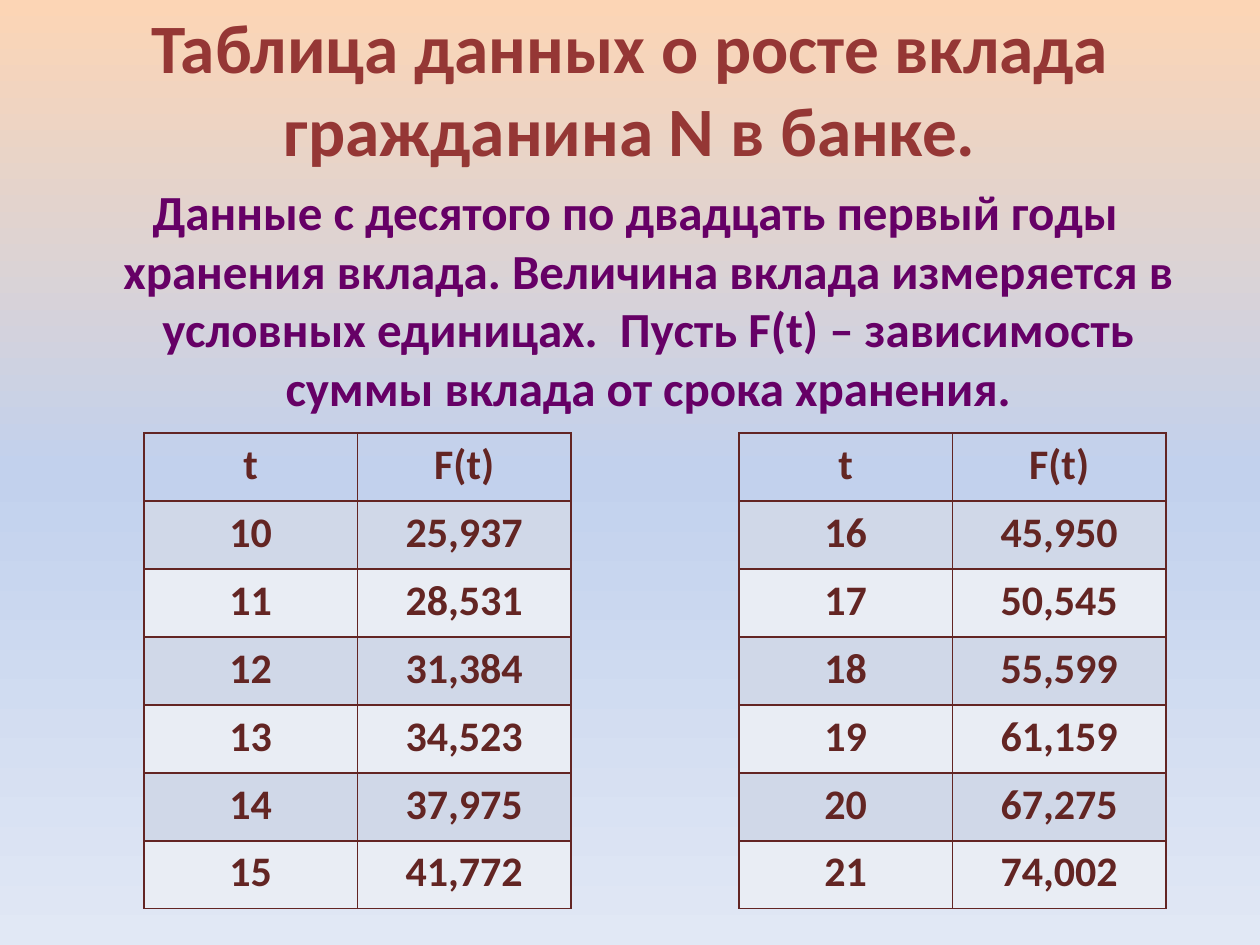
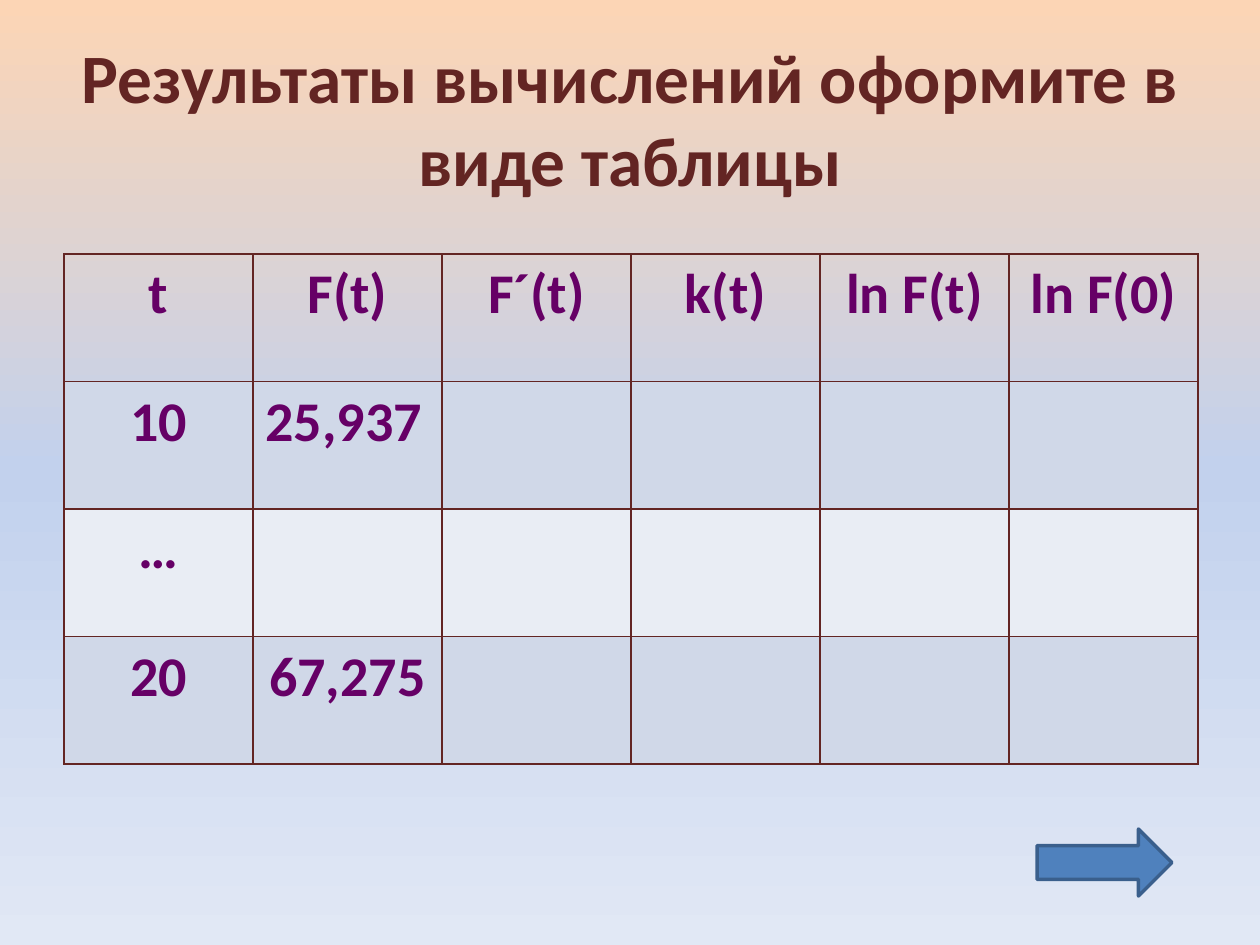
from pptx import Presentation
from pptx.dml.color import RGBColor
from pptx.enum.shapes import MSO_SHAPE as Shape
from pptx.enum.text import MSO_ANCHOR as Anchor, MSO_AUTO_SIZE as AutoSize, PP_ALIGN as Align
from pptx.oxml import parse_xml
from pptx.oxml.ns import nsdecls, qn
from pptx.util import Emu, Pt

PX = 914400 / 126
BROWN, RED, PURPLE = "632523", "953735", "660066"
BANDS = ["D0D8E8", "E9EDF4"]
BACKDROP = {0: "FCD5B5", 50: "C2D1ED", 100: "E1E8F5"}


def px(length):
    return Emu(round(length * PX))


def rgb(code):
    return RGBColor.from_string(code)


def apply(target, formats):
    for name, value in formats.items():
        setattr(target, name, value)


class Deck:
    font = {"name": "Calibri", "bold": True}
    plain_frame = {"word_wrap": True, "auto_size": AutoSize.NONE}

    def __init__(self):
        self.prs = Presentation()
        apply(self.prs, {"slide_width": px(1260), "slide_height": px(945)})
        self.slide = None
        self.backdrop()

    def backdrop(self):
        master = self.prs.slide_master
        master.background.fill.gradient()
        stops = "".join(
            f'<a:gs pos="{share * 1000}"><a:srgbClr val="{code}"/></a:gs>'
            for share, code in BACKDROP.items()
        )
        gradient = parse_xml(
            f'<a:gradFill {nsdecls("a")} rotWithShape="1"><a:gsLst>{stops}</a:gsLst>'
            '<a:lin ang="5400000" scaled="0"/></a:gradFill>'
        )
        current = master.element.find(".//" + qn("p:bgPr")).find(qn("a:gradFill"))
        current.getparent().replace(current, gradient)

    def new_slide(self, layout):
        self.slide = self.prs.slides.add_slide(self.prs.slide_layouts.get_by_name(layout))

    def add_text(self, paragraph, text, size, color, align=Align.CENTER):
        paragraph.alignment = align
        run = paragraph.add_run()
        run.text = text
        apply(run.font, {**self.font, "size": Pt(size)})
        run.font.color.rgb = rgb(color)

    def place(self, holder, box, anchor):
        apply(holder, dict(zip(("left", "top", "width", "height"), map(px, box))))
        apply(holder.text_frame, {**self.plain_frame, "vertical_anchor": anchor})
        return holder.text_frame.paragraphs[0]

    def title(self, text, box, color):
        heading = self.place(self.slide.shapes.title, box, Anchor.MIDDLE)
        self.add_text(heading, text, 39.6, color)

    def body(self, text, box):
        passage = self.place(self.slide.placeholders[1], box, Anchor.TOP)
        self.add_text(passage, text, 28, PURPLE)
        passage.space_before = Pt(5.6)
        properties = passage._p.get_or_add_pPr()
        properties.set("marL", str(px(48)))
        properties.set("indent", str(px(-26)))
        properties.append(parse_xml(f'<a:buNone {nsdecls("a")}/>'))

    def table(self, rows, box, size, color, left_cells=()):
        grid = self.slide.shapes.add_table(len(rows), len(rows[0]), *map(px, box)).table
        for r, row in enumerate(rows):
            for c, text in enumerate(row):
                cell = grid.cell(r, c)
                if r:
                    cell.fill.solid()
                    cell.fill.fore_color.rgb = rgb(BANDS[(r - 1) % 2])
                else:
                    cell.fill.background()
                self.borders(cell)
                if text:
                    align = Align.LEFT if (r, c) in left_cells else Align.CENTER
                    self.add_text(cell.text_frame.paragraphs[0], text, size, color, align)

    def borders(self, cell):
        properties = cell._tc.get_or_add_tcPr()
        for position, side in enumerate("LRTB"):
            properties.insert(position, parse_xml(
                f'<a:ln{side} {nsdecls("a")} w="{Pt(1)}"><a:solidFill>'
                f'<a:srgbClr val="{BROWN}"/></a:solidFill></a:ln{side}>'
            ))

    def arrow(self, box, fill, outline):
        pointer = self.slide.shapes.add_shape(Shape.RIGHT_ARROW, *map(px, box))
        pointer.shadow.inherit = False
        pointer.fill.solid()
        pointer.fill.fore_color.rgb = rgb(fill)
        pointer.line.color.rgb = rgb(outline)
        pointer.line.width = Pt(2)


def main():
    deck = Deck()

    deck.new_slide("Title and Content")
    deck.title("Таблица данных о росте вклада гражданина N в банке.", (63, 0, 1134, 175), RED)
    deck.body(
        "Данные с десятого по двадцать первый годы хранения вклада. "
        "Величина вклада измеряется в условных единицах.  "
        "Пусть F(t) – зависимость суммы вклада от срока хранения.",
        (44, 175, 1160, 735),
    )
    deposits = [
        "25,937", "28,531", "31,384", "34,523", "37,975", "41,772",
        "45,950", "50,545", "55,599", "61,159", "67,275", "74,002",
    ]
    growth = [(str(year), amount) for year, amount in enumerate(deposits, 10)]
    for left, years in ((144, growth[:6]), (739, growth[6:])):
        deck.table([("t", "F(t)"), *years], (left, 433, 427, 476), 24, BROWN)

    deck.new_slide("Title Only")
    deck.title("Результаты вычислений оформите в виде таблицы", (63, 38, 1134, 158), BROWN)
    blanks = [""] * 4
    results = [
        ["t", "F(t)", "F´(t)", "k(t)", "ln F(t)", "ln F(0)"],
        ["10", "25,937", *blanks],
        ["…", "", *blanks],
        ["20", "67,275", *blanks],
    ]
    deck.table(results, (64, 254, 1134, 510), 32, PURPLE, left_cells={(1, 1)})
    deck.arrow((1037, 829, 135, 67), "4F81BD", "3A5F8C")

    deck.prs.save("out.pptx")


if __name__ == "__main__":
    main()
